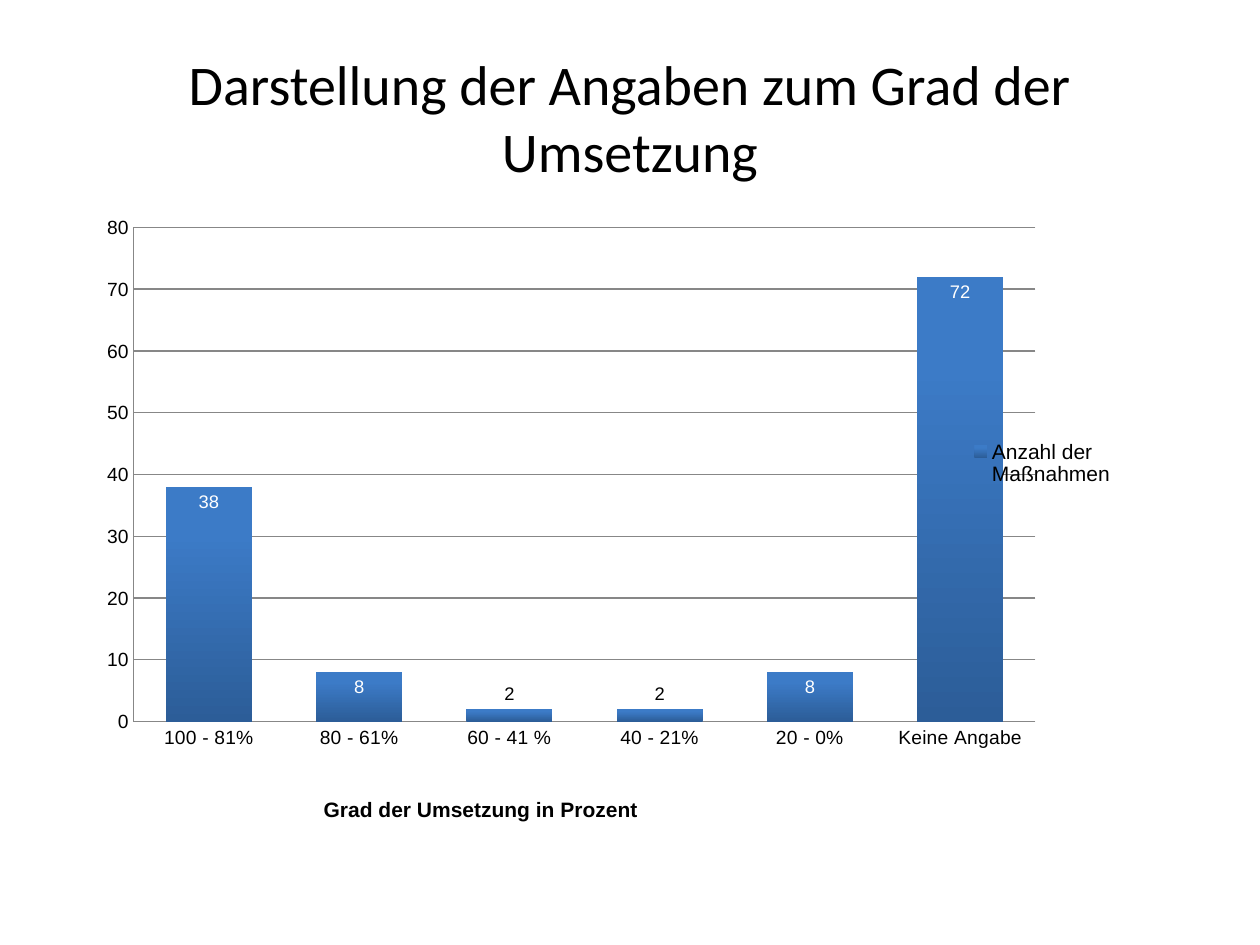
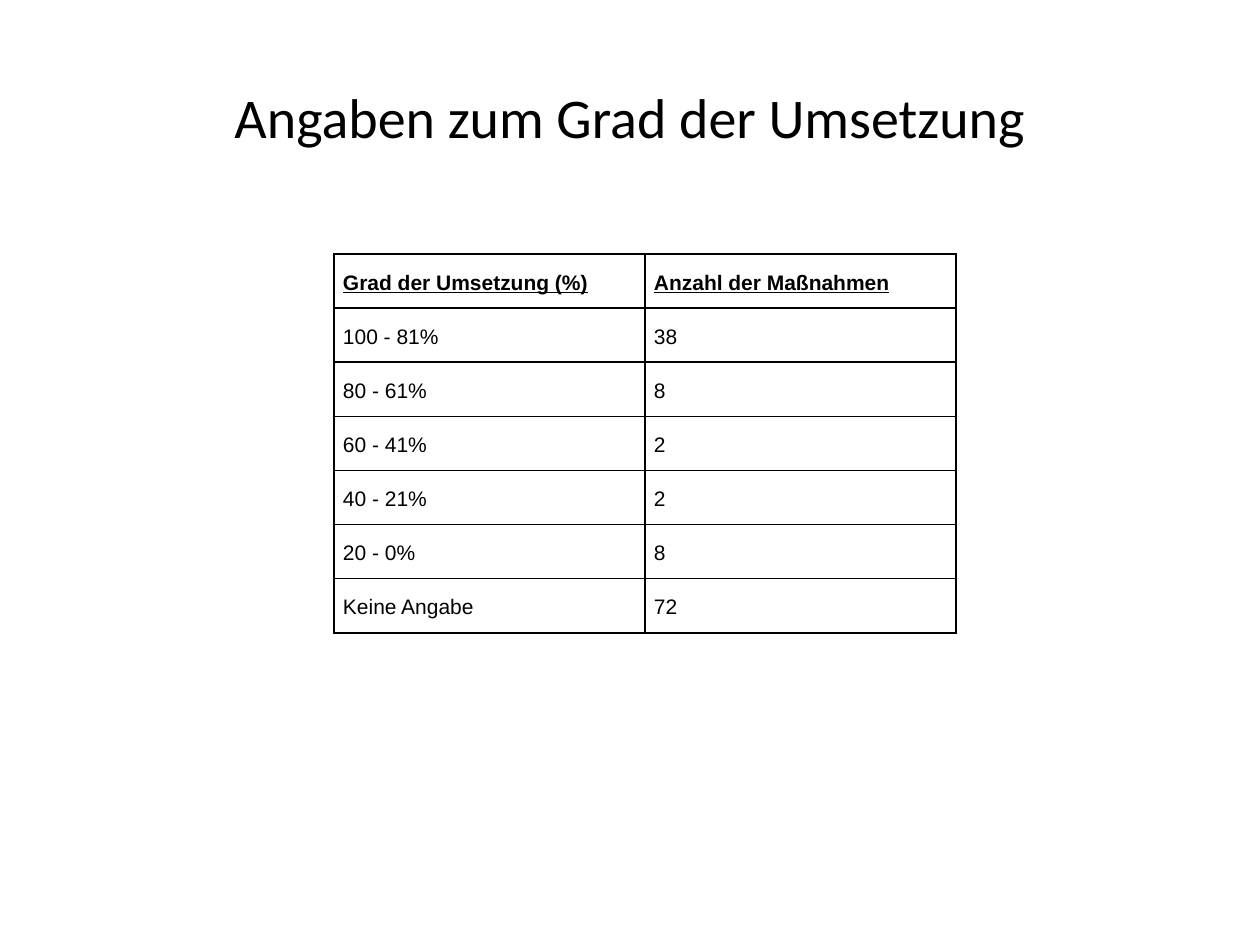
"""Build two slides on the degree of implementation: a column chart and its table."""
import pptx
import pptx.chart.data
import pptx.dml.color
import pptx.enum.chart
import pptx.enum.text
import pptx.oxml
import pptx.oxml.ns
import pptx.util

EMU_PER_PX = 914400 / 126
GRADES = ["100 - 81%", "80 - 61%", "60 - 41 %", "40 - 21%", "20 - 0%", "Keine Angabe"]
COUNTS = [38, 8, 2, 2, 8, 72]
COUNT_NAME = "Anzahl der Maßnahmen"


def px(length):
    return pptx.util.Emu(round(length * EMU_PER_PX))


def color(value):
    return pptx.dml.color.RGBColor.from_string(value)


class DeckBuilder:
    title_font = "Calibri"
    body_font = "Arial"
    ink = "000000"
    grid = "878787"
    bar_bottom = "2C5D98"
    bar_top = "3C7BC7"

    def __init__(self):
        self.deck = pptx.Presentation()
        self.deck.slide_width = px(1260)
        self.deck.slide_height = px(945)
        self.page = None

    def style(self, font, size, name=body_font, ink=ink, bold=False, underline=None):
        font.name = name
        font.size = pptx.util.Pt(size)
        font.bold = bold
        font.underline = underline
        font.color.rgb = color(ink)

    def add_page(self, title):
        self.page = self.deck.slides.add_slide(self.deck.slide_layouts[5])
        box = self.page.shapes.title
        box.left, box.top, box.width, box.height = map(px, (63, 38, 1134, 157))
        box.text_frame.vertical_anchor = pptx.enum.text.MSO_ANCHOR.MIDDLE
        para = box.text_frame.paragraphs[0]
        para.alignment = pptx.enum.text.PP_ALIGN.CENTER
        span = para.add_run()
        span.text = title
        self.style(span.font, 32, self.title_font)

    def place_part(self, part, index, **fractions):
        for old in part.findall(pptx.oxml.ns.qn("c:layout")):
            part.remove(old)
        modes = ["layoutTarget"] if "h" in fractions and index == 0 else []
        settings = [(mode, "inner") for mode in modes]
        settings += [("xMode", "edge"), ("yMode", "edge"), *fractions.items()]
        items = "".join(f'<c:{name} val="{value}"/>' for name, value in settings)
        part.insert(index, pptx.oxml.parse_xml(
            f'<c:layout {pptx.oxml.ns.nsdecls("c")}><c:manualLayout>{items}'
            "</c:manualLayout></c:layout>"))

    def add_column_chart(self, left, top, width, height, axis_title):
        data = pptx.chart.data.CategoryChartData()
        data.categories = GRADES
        data.add_series(COUNT_NAME, COUNTS)
        chart = self.page.shapes.add_chart(
            pptx.enum.chart.XL_CHART_TYPE.COLUMN_CLUSTERED,
            px(left), px(top), px(width), px(height), data).chart
        chart.has_title = False
        self.style(chart.font, 10, self.title_font)
        self.place_part(chart._chartSpace.chart.plotArea, 0, x=0.044, y=0.038, w=0.795, h=0.8)
        self.format_axes(chart, axis_title)
        self.format_columns(chart.plots[0])
        chart.has_legend = True
        legend = chart.legend
        legend.position = pptx.enum.chart.XL_LEGEND_POSITION.RIGHT
        legend.include_in_layout = False
        self.style(legend.font, 12)
        self.place_part(legend._element, 1, x=0.77, y=0.37, w=0.15, h=0.1)

    def format_axes(self, chart, axis_title):
        for axis in (chart.category_axis, chart.value_axis):
            axis.major_tick_mark = pptx.enum.chart.XL_TICK_MARK.NONE
            axis.minor_tick_mark = pptx.enum.chart.XL_TICK_MARK.NONE
            axis.format.line.color.rgb = color(self.grid)
            self.style(axis.tick_labels.font, 11)
        values = chart.value_axis
        values.minimum_scale, values.maximum_scale, values.major_unit = 0, 80, 10
        values.has_major_gridlines = True
        values.major_gridlines.format.line.color.rgb = color(self.grid)
        title = chart.category_axis.axis_title
        span = title.text_frame.paragraphs[0].add_run()
        span.text = axis_title
        self.style(span.font, 12, bold=True)
        self.place_part(title._element, 1, x=0.208, y=0.954)

    def format_columns(self, plot):
        plot.gap_width = 75
        plot.overlap = 40
        plot.vary_by_categories = False
        series = plot.series[0]
        fill = series.format.fill
        fill.gradient()
        fill.gradient_angle = 90
        stops = zip(fill.gradient_stops, (self.bar_bottom, self.bar_top), (0, 0.8))
        for stop, shade, position in stops:
            stop.color.rgb = color(shade)
            stop.position = position
        labels = series.data_labels
        labels.show_value = True
        labels.position = pptx.enum.chart.XL_LABEL_POSITION.INSIDE_END
        self.style(labels.font, 10.5, ink="FFFFFF")
        for index, count in enumerate(COUNTS):
            if count < 5:
                label = series.points[index].data_label
                self.style(label.font, 10.5)
                label.position = pptx.enum.chart.XL_LABEL_POSITION.OUTSIDE_END

    def add_table(self, left, top, width, height, rows):
        table = self.page.shapes.add_table(
            len(rows), len(rows[0]), px(left), px(top), px(width), px(height)).table
        table.first_row = False
        table.horz_banding = False
        for row_index, row in enumerate(rows):
            for column_index, text in enumerate(row):
                self.fill_cell(table.cell(row_index, column_index), text, row_index == 0)

    def fill_cell(self, cell, text, header):
        cell.margin_left = cell.margin_right = px(9)
        cell.margin_top = cell.margin_bottom = 0
        cell.vertical_anchor = pptx.enum.text.MSO_ANCHOR.MIDDLE
        para = cell.text_frame.paragraphs[0]
        para.line_spacing = 1.15
        para.space_after = pptx.util.Pt(10)
        span = para.add_run()
        span.text = text
        self.style(span.font, 12, bold=header, underline=header)
        properties = cell._tc.get_or_add_tcPr()
        for side in "LRTB":
            properties.append(pptx.oxml.parse_xml(
                f'<a:ln{side} {pptx.oxml.ns.nsdecls("a")} w="12700"><a:solidFill>'
                f'<a:srgbClr val="{self.ink}"/></a:solidFill></a:ln{side}>'))
        cell.fill.background()


def main():
    builder = DeckBuilder()
    builder.add_page("Darstellung der Angaben zum Grad der Umsetzung")
    builder.add_column_chart(84, 204, 1134, 624, "Grad der Umsetzung in Prozent")
    builder.add_page("Angaben zum Grad der Umsetzung")
    rows = [("Grad der Umsetzung (%)", COUNT_NAME)]
    rows += [(grade.replace(" %", "%"), str(count)) for grade, count in zip(GRADES, COUNTS)]
    builder.add_table(334, 254, 622, 379, rows)
    builder.deck.save("out.pptx")


if __name__ == "__main__":
    main()
